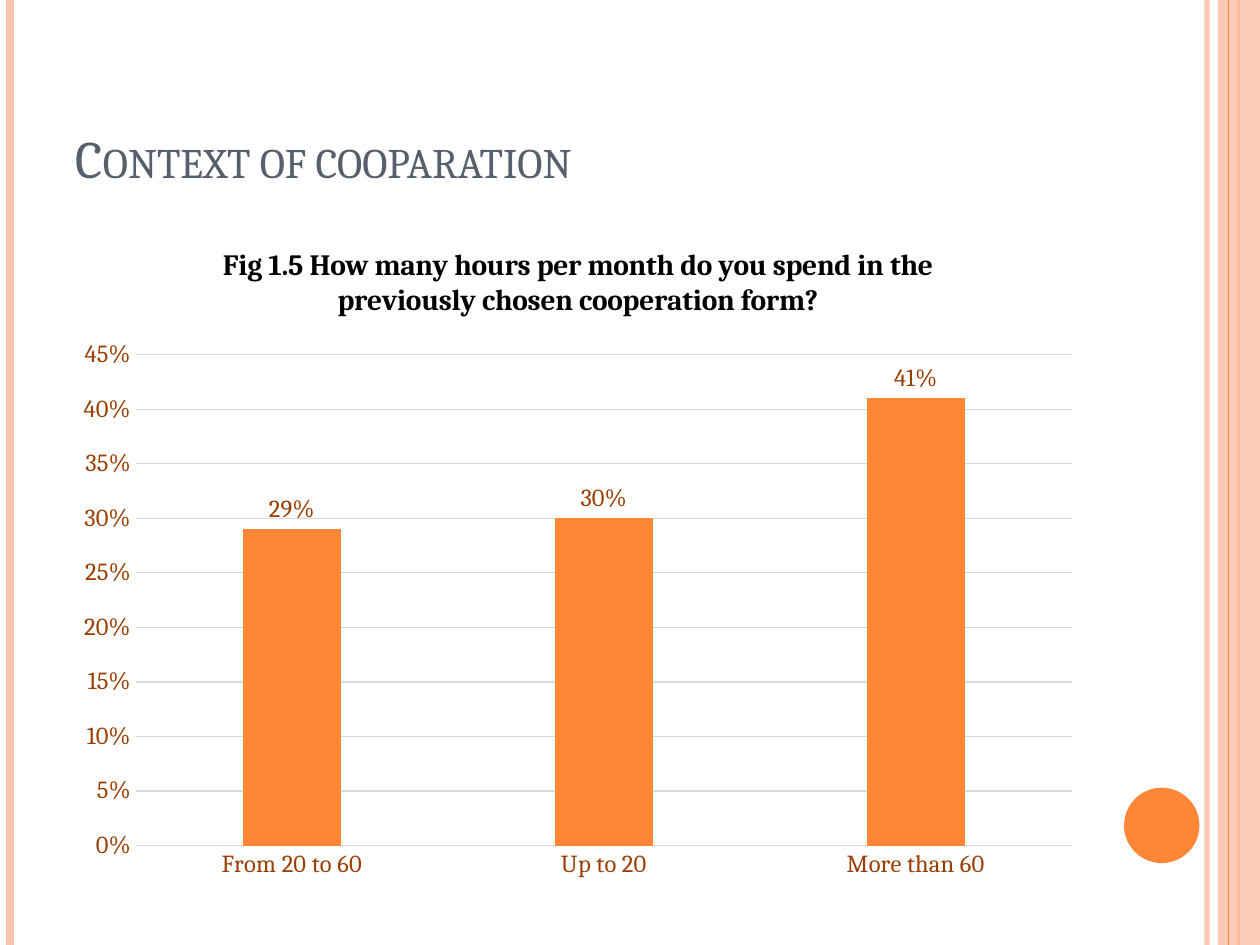
import pptx
import pptx.util
import pptx.dml.color
import pptx.chart.data
import pptx.enum.chart
import pptx.enum.shapes
import pptx.enum.text
import pptx.oxml.ns
import lxml.etree

Cm, Pt = pptx.util.Cm, pptx.util.Pt
qn = pptx.oxml.ns.qn
kinds = pptx.enum.chart

# Content
HEAD = "Context of cooparation"
ASK = ("Fig 1.5 How many hours per month do you spend in the "
       "previously chosen cooperation form?")
HOURS = {"From 20 to 60": 0.29, "Up to 20": 0.30, "More than 60": 0.41}

# Look
FONT = "Cambria"
ORANGE, PEACH, BROWN = "FE8637", "FEC3AE", "9A3D01"
SLATE, GREY, WHITE, BLACK = "575F6D", "D9D9D9", "FFFFFF", "000000"
WIDE, HIGH = 25.4, 19.05
LEFT, SPAN = 1.27, 20.75  # column shared by title and chart

# Stripes: x in cm, colour, points, opacity in percent
UNDER = [(24.33, PEACH, 3, 93), (0.2, PEACH, 4.5, 100), (24.97, ORANGE, 1.5, 100)]
OVER = [(24.77, ORANGE, 0.75, 100)]


def paint(color, code):
    color.rgb = pptx.dml.color.RGBColor.from_string(code)


def fill(part, code):
    part.fill.solid()
    paint(part.fill.fore_color, code)


def style(font, size, code, bold=False):
    font.name, font.size, font.bold = FONT, Pt(size), bold
    paint(font.color, code)


def fade(part, share):
    node = next(part._element.spPr.iter(qn("a:srgbClr")))
    lxml.etree.SubElement(node, qn("a:alpha")).set("val", str(share * 1000))


def stripe(x, code, size, share):
    line = slide.shapes.add_connector(
        pptx.enum.shapes.MSO_CONNECTOR.STRAIGHT, Cm(x), 0, Cm(x), Cm(HIGH))
    paint(line.line.color, code)
    line.line.width = Pt(size)
    if share < 100:
        fade(line, share)
    lxml.etree.SubElement(line._element.spPr, qn("a:effectLst"))


def solid(kind, x, y, w, h, code):
    shape = slide.shapes.add_shape(kind, Cm(x), Cm(y), Cm(w), Cm(h))
    fill(shape, code)
    shape.line.fill.background()
    shape.shadow.inherit = False
    return shape


deck = pptx.Presentation()
deck.slide_width, deck.slide_height = Cm(WIDE), Cm(HIGH)
slide = deck.slides.add_slide(deck.slide_layouts[5])
fill(slide.background, WHITE)

# Side stripes, band and dot
forms = pptx.enum.shapes.MSO_SHAPE
for item in UNDER:
    stripe(*item)
band = solid(forms.RECTANGLE, 24.55, 0, WIDE - 24.55, HIGH, PEACH)
fade(band, 87)
for item in OVER:
    stripe(*item)
solid(forms.OVAL, 22.66, 15.88, 1.52, 1.52, ORANGE)

# Title
title = slide.shapes.title
title.left, title.top, title.width, title.height = (
    Cm(LEFT), Cm(0.76), Cm(SPAN), Cm(3.18))
frame = title.text_frame
frame.word_wrap = True
frame.auto_size = pptx.enum.text.MSO_AUTO_SIZE.NONE
frame.vertical_anchor = pptx.enum.text.MSO_ANCHOR.BOTTOM
para = frame.paragraphs[0]
para.alignment = pptx.enum.text.PP_ALIGN.LEFT
run = para.add_run()
run.text = HEAD
style(run.font, 30, SLATE)
run.font._element.set("cap", "small")

# Chart
data = pptx.chart.data.CategoryChartData(number_format="0%")
data.categories = list(HOURS)
data.add_series("Series 1", list(HOURS.values()))
chart = slide.shapes.add_chart(
    kinds.XL_CHART_TYPE.COLUMN_CLUSTERED,
    Cm(LEFT), Cm(4.45), Cm(SPAN), Cm(13.55), data).chart
style(chart.font, 14, BROWN)
chart.has_legend = False
chart.has_title = True
run = chart.chart_title.text_frame.paragraphs[0].add_run()
run.text = ASK
style(run.font, 16.8, BLACK, True)
chart.chart_title.include_in_layout = False

# Columns and their labels
plot = chart.plots[0]
plot.gap_width, plot.overlap, plot.vary_by_categories = 219, -27, False
fill(plot.series[0].format, ORANGE)
plot.has_data_labels = True
labels = plot.data_labels
labels.show_value = True
labels.position = kinds.XL_LABEL_POSITION.OUTSIDE_END
labels.number_format, labels.number_format_is_linked = "0%", False
style(labels.font, 14, BROWN)

# Axes
cats, vals = chart.category_axis, chart.value_axis
for axis in (cats, vals):
    axis.major_tick_mark = axis.minor_tick_mark = kinds.XL_TICK_MARK.NONE
    style(axis.tick_labels.font, 14, BROWN)
vals.has_major_gridlines = True
for part in (cats.format.line, vals.major_gridlines.format.line):
    paint(part.color, GREY)
    part.width = Pt(0.75)
vals.format.line.fill.background()
vals.minimum_scale, vals.maximum_scale, vals.major_unit = 0, 0.45, 0.05
vals.tick_labels.number_format = "0%"
vals.tick_labels.number_format_is_linked = False

deck.save("out.pptx")
